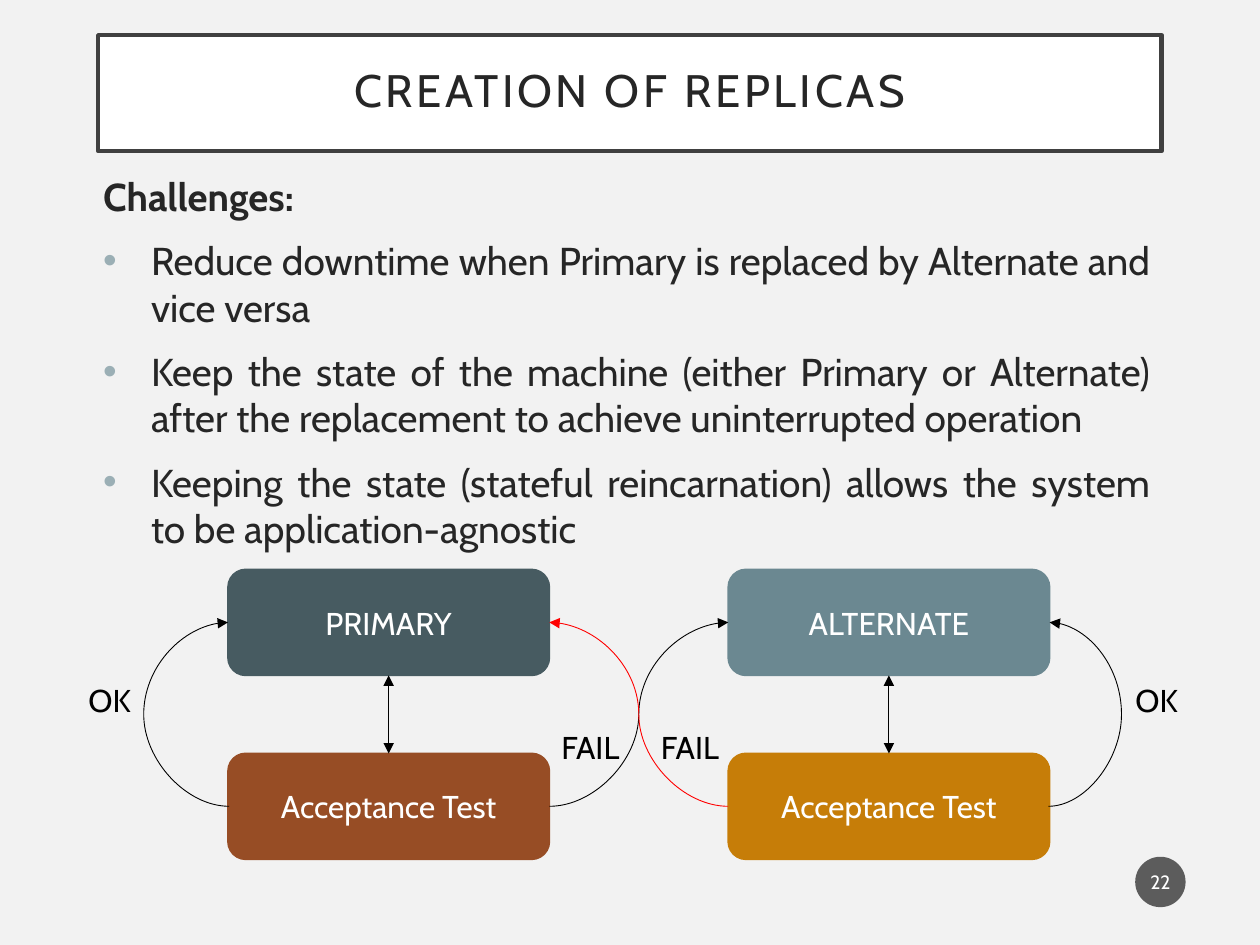
"""Build the slide on the challenges of creating replicas."""
from lxml import etree
from pptx import Presentation
from pptx.dml.color import RGBColor
from pptx.enum import shapes, text
from pptx.oxml.ns import qn
from pptx.util import Inches, Pt

FONT = "Cabin"
WHITE = RGBColor(0xFF, 0xFF, 0xFF)
BLACK = RGBColor(0, 0, 0)
RED = RGBColor(0xFF, 0, 0)
INK = RGBColor(0x26, 0x26, 0x26)
FRAME = RGBColor(0x40, 0x40, 0x40)
BACKDROP = RGBColor(0xF2, 0xF2, 0xF2)
BADGE = RGBColor(0x1D, 0x1D, 0x1D)
SLATE = RGBColor(0x47, 0x5B, 0x61)
STEEL = RGBColor(0x6B, 0x88, 0x91)
RUST = RGBColor(0x97, 0x4D, 0x25)
AMBER = RGBColor(0xC6, 0x7D, 0x08)

prs = Presentation()
prs.slide_width, prs.slide_height = Inches(10), Inches(7.5)
slide = prs.slides.add_slide(prs.slide_layouts[6])
slide.background.fill.solid()
slide.background.fill.fore_color.rgb = BACKDROP


def add_label(kind, box, words, size, color, fill=None, line=None, weight=1):
    """Add a shape, or a text box when kind is None, with one centred line."""
    place = [Inches(v) for v in box]
    if kind is None:
        label = slide.shapes.add_textbox(*place)
    else:
        label = slide.shapes.add_shape(kind, *place)
        label.shadow.inherit = False
        label.fill.solid()
        label.fill.fore_color.rgb = fill
        if line is None:
            label.line.fill.background()
        else:
            label.line.color.rgb = line
            label.line.width = Pt(weight)
        label.text_frame.vertical_anchor = text.MSO_ANCHOR.MIDDLE
    label.text_frame.word_wrap = True
    paragraph = label.text_frame.paragraphs[0]
    paragraph.text = words
    paragraph.alignment = text.PP_ALIGN.CENTER
    paragraph.font.name, paragraph.font.size = FONT, Pt(size)
    paragraph.font.color.rgb = color
    return label


def add_arrow(start, end, color=BLACK, bend=None, double=False):
    """Add a straight arrow, or one curving through the x position bend."""
    kind = shapes.MSO_CONNECTOR.STRAIGHT if bend is None else shapes.MSO_CONNECTOR.CURVE
    arrow = slide.shapes.add_connector(kind, *[Inches(v) for v in start + end])
    arrow.line.color.rgb = color
    arrow.line.width = Pt(0.5)
    outline = arrow.line._get_or_add_ln()
    for tip in ("a:headEnd", "a:tailEnd") if double else ("a:tailEnd",):
        etree.SubElement(outline, qn(tip), type="triangle")
    properties = arrow._element.spPr
    etree.SubElement(properties, qn("a:effectLst"))
    if bend is not None:
        ratio = round((bend - start[0]) / (end[0] - start[0]) * 100000)
        guides = properties.find(qn("a:prstGeom")).get_or_add_avLst()
        etree.SubElement(guides, qn("a:gd"), name="adj1", fmla=f"val {ratio}")


challenges = slide.shapes.add_textbox(Inches(0.72), Inches(1.32), Inches(8.51), Inches(3.2))
challenges.text_frame.word_wrap = True
challenges.text_frame.text = "\n".join([
    "Challenges:",
    "Reduce downtime when Primary is replaced by Alternate and vice versa",
    "Keep the state of the machine (either Primary or Alternate) after the "
    "replacement to achieve uninterrupted operation",
    "Keeping the state (stateful reincarnation) allows the system to be "
    "application-agnostic",
])
for index, paragraph in enumerate(challenges.text_frame.paragraphs):
    paragraph.alignment = text.PP_ALIGN.JUSTIFY
    if index:
        paragraph.space_before = Pt(10)
        settings = paragraph._p.get_or_add_pPr()
        settings.set("marL", str(Inches(0.38)))
        settings.set("indent", str(-Inches(0.38)))
        bullet_color = etree.SubElement(settings, qn("a:buClr"))
        etree.SubElement(bullet_color, qn("a:srgbClr"), val="9BAFB5")
        etree.SubElement(settings, qn("a:buFont"), typeface="Arial")
        etree.SubElement(settings, qn("a:buChar"), char="•")
    paragraph.font.name, paragraph.font.size = FONT, Pt(22.2)
    paragraph.font.bold = index == 0
    paragraph.font.color.rgb = INK

page = add_label(shapes.MSO_SHAPE.OVAL, (9.01, 6.8, 0.4, 0.4), "22", 11, WHITE, BADGE)
page.text_frame.margin_left = page.text_frame.margin_right = Inches(0.02)
badge_color = page._element.spPr.find(qn("a:solidFill"))[0]
etree.SubElement(badge_color, qn("a:alpha"), val="70000")

title = add_label(shapes.MSO_SHAPE.RECTANGLE, (0.78, 0.28, 8.44, 0.92),
                  "CREATION OF REPLICAS", 26, INK, WHITE, FRAME, 2.5)
title.text_frame.paragraphs[0].line_spacing = 0.9
title.text_frame.paragraphs[0].runs[0].font._element.set("spc", "200")

WIDTH, HEIGHT = 2.55, 0.84
TOP, BOTTOM = 4.52, 5.98
UPPER, LOWER = TOP + HEIGHT / 2, BOTTOM + HEIGHT / 2
PRIMARY, ALTERNATE = 1.81, 5.78
for left, name, unit_color, test_color in (
    (PRIMARY, "PRIMARY", SLATE, RUST),
    (ALTERNATE, "ALTERNATE", STEEL, AMBER),
):
    for top, words, color in ((TOP, name, unit_color), (BOTTOM, "Acceptance Test", test_color)):
        add_label(shapes.MSO_SHAPE.ROUNDED_RECTANGLE, (left, top, WIDTH, HEIGHT),
                  words, 18, WHITE, color, color)
    middle = left + WIDTH / 2
    add_arrow((middle, TOP + HEIGHT), (middle, BOTTOM), double=True)

primary_right, alternate_right = PRIMARY + WIDTH, ALTERNATE + WIDTH
for start_x, end_x, bend, color in (
    (PRIMARY + 0.01, PRIMARY, 1.13, BLACK),
    (alternate_right - 0.01, alternate_right, 8.91, BLACK),
    (primary_right, ALTERNATE, 5.07, BLACK),
    (ALTERNATE, primary_right, 5.07, RED),
):
    add_arrow((start_x, LOWER), (end_x, UPPER), color, bend)

for left, top, width, outcome in (
    (0.55, 5.36, 0.64, "OK"),
    (8.86, 5.36, 0.64, "OK"),
    (4.31, 5.73, 0.75, "FAIL"),
    (5.1, 5.73, 0.75, "FAIL"),
):
    add_label(None, (left, top, width, 0.4), outcome, 18, BLACK)

prs.save("out.pptx")
